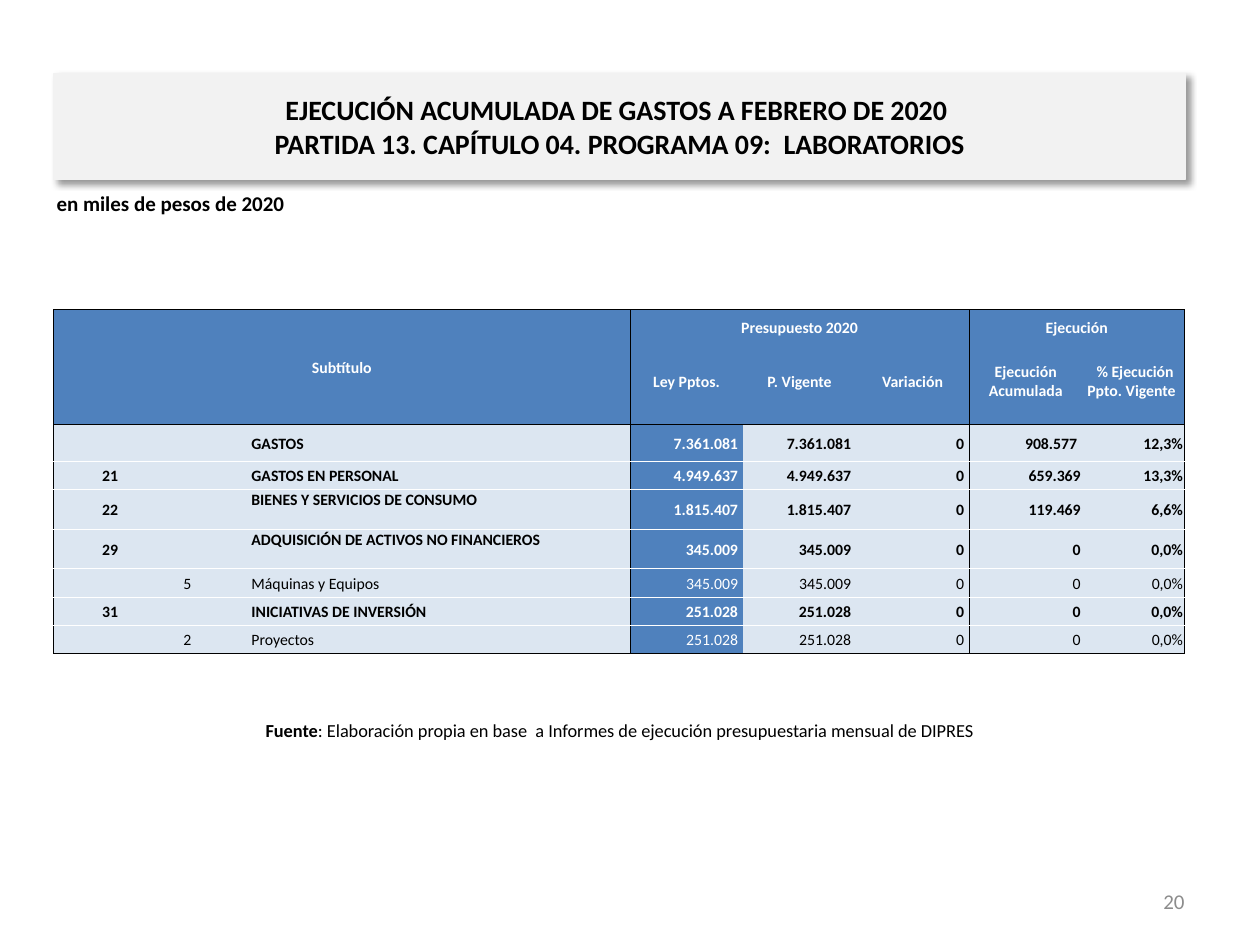
from lxml import etree
from pptx import Presentation
from pptx import util as u
from pptx.dml.color import RGBColor
from pptx.enum import shapes, text
from pptx.oxml import ns

BLACK = RGBColor(0x00, 0x00, 0x00)
WHITE = RGBColor(0xFF, 0xFF, 0xFF)
BLUE = RGBColor(0x4F, 0x81, 0xBD)
PALE_BLUE = RGBColor(0xDC, 0xE6, 0xF1)
PALE_GRAY = RGBColor(0xF2, 0xF2, 0xF2)
PAGE_GRAY = RGBColor(0x8C, 0x8C, 0x8C)
LEFT, CENTER, RIGHT = text.PP_ALIGN.LEFT, text.PP_ALIGN.CENTER, text.PP_ALIGN.RIGHT
TOP, MIDDLE, BOTTOM = text.MSO_ANCHOR.TOP, text.MSO_ANCHOR.MIDDLE, text.MSO_ANCHOR.BOTTOM


def write(frame, runs, align, size, color):
    """Fill a text frame with (text, bold) runs; a newline run is a line break."""
    paragraph = frame.paragraphs[0]
    paragraph.alignment = align
    for words, bold in runs:
        if words == "\n":
            paragraph.add_line_break()
            continue
        run = paragraph.add_run()
        run.text = words
        font_format = {"name": "Calibri", "size": u.Pt(size), "bold": bold}
        for key, value in font_format.items():
            setattr(run.font, key, value)
        run.font.color.rgb = color


def draw_border(cell, side, color):
    """Draw one side of a cell, or clear it when the colour is None."""
    line = etree.SubElement(cell._tc.get_or_add_tcPr(), ns.qn("a:ln" + side), w="6350")
    if color is None:
        etree.SubElement(line, ns.qn("a:noFill"))
    else:
        solid = etree.SubElement(line, ns.qn("a:solidFill"))
        etree.SubElement(solid, ns.qn("a:srgbClr"), val=str(color))


prs = Presentation()
prs.slide_width, prs.slide_height = u.Cm(25.4), u.Cm(19.05)
slide = prs.slides.add_slide(prs.slide_layouts[6])

# Title band
band = slide.shapes.add_shape(shapes.MSO_SHAPE.RECTANGLE,
                              u.Cm(1.09), u.Cm(1.48), u.Cm(22.81), u.Cm(2.13))
band.shadow.inherit = False
band.fill.solid()
band.fill.fore_color.rgb = PALE_GRAY
band.line.color.rgb = PALE_GRAY
band.line.width = u.Pt(0.75)
shadow = etree.SubElement(band._element.spPr.find(ns.qn("a:effectLst")), ns.qn("a:outerShdw"),
                          blurRad="50800", dist="38100", dir="2700000",
                          algn="tl", rotWithShape="0")
shadow_color = etree.SubElement(shadow, ns.qn("a:srgbClr"), val=str(BLACK))
etree.SubElement(shadow_color, ns.qn("a:alpha"), val="40000")
band.text_frame.word_wrap = True
band.text_frame.vertical_anchor = MIDDLE
title = [("EJECUCIÓN ACUMULADA DE GASTOS A FEBRERO DE 2020 ", True),
         ("\n", True),
         ("PARTIDA 13. CAPÍTULO 04. PROGRAMA 09:  LABORATORIOS", True)]
write(band.text_frame, title, CENTER, 16, BLACK)

# Unit line, source and page number
source = [("Fuente", True),
          (": Elaboración propia en base  a Informes de ejecución "
           "presupuestaria mensual de DIPRES", False)]
captions = [
    ((0.89, 3.72, 21.44, 0.79), [("en miles de pesos de 2020", True)], LEFT, TOP, 12, BLACK),
    ((1.09, 14.33, 22.81, 0.79), source, CENTER, MIDDLE, 10.5, BLACK),
    ((18.21, 17.65, 5.92, 1.02), [("20", False)], RIGHT, MIDDLE, 12, PAGE_GRAY),
]
for place, runs, align, anchor, size, color in captions:
    caption = slide.shapes.add_textbox(*map(u.Cm, place)).text_frame
    caption.word_wrap = True
    caption.vertical_anchor = anchor
    write(caption, runs, align, size, color)

# Budget table
headers = [
    ["Subtítulo", "", "", "", "Presupuesto 2020", "", "", "Ejecución", ""],
    ["", "", "", "", "Ley Pptos.", "P. Vigente", "Variación",
     "Ejecución Acumulada", " % Ejecución Ppto. Vigente "],
]
# Subtitle code, item code, label, budget, executed amount, executed share
spending = [
    ("", "", "GASTOS", "7.361.081 ", "908.577 ", "12,3%"),
    ("21", "", "GASTOS EN PERSONAL", "4.949.637 ", "659.369", "13,3%"),
    ("22", "", "BIENES Y SERVICIOS DE CONSUMO", "1.815.407 ", "119.469", "6,6%"),
    ("29", "", "ADQUISICIÓN DE ACTIVOS NO FINANCIEROS", "345.009 ", "0", "0,0%"),
    ("", "5", "Máquinas y Equipos", "345.009 ", "0", "0,0%"),
    ("31", "", "INICIATIVAS DE INVERSIÓN", "251.028 ", "0", "0,0%"),
    ("", "2", "Proyectos", "251.028 ", "0", "0,0%"),
]
grid = headers + [[code, item, "", label, budget, budget, "0 ", executed, share]
                  for code, item, label, budget, executed, share in spending]
widths = [2.28, 0.84, 0.84, 7.66, 2.28, 2.28, 2.28, 2.28, 2.06]
heights = [0.57, 1.75, 0.74, 0.57, 0.8, 0.8, 0.57, 0.57, 0.57]
tall_rows = (4, 5)
LABEL, LAW = 3, 4
black_columns = (0, 4, 7, len(widths))
black_rows = (0, len(headers), len(grid))

budget_table = slide.shapes.add_table(len(grid), len(widths), u.Cm(1.08), u.Cm(6.24),
                                      u.Cm(sum(widths)), u.Cm(sum(heights))).table
budget_table.first_row = budget_table.horz_banding = False
for column, width in zip(budget_table.columns, widths):
    column.width = u.Cm(width)
for row, height in zip(budget_table.rows, heights):
    row.height = u.Cm(height)
for first, last in [((0, 0), (1, 3)), ((0, 4), (0, 6)), ((0, 7), (0, 8))]:
    budget_table.cell(*first).merge(budget_table.cell(*last))

cell_format = {"margin_left": u.Cm(0.03), "margin_right": u.Cm(0.03),
               "margin_top": u.Cm(0.03), "margin_bottom": 0}
for r, row_words in enumerate(grid):
    in_header = r < len(headers)
    bold = in_header or not row_words[1]
    for c, words in enumerate(row_words):
        cell = budget_table.cell(r, c)
        for key, value in cell_format.items():
            setattr(cell, key, value)
        if r == 0 and c >= LAW:
            cell.vertical_anchor = BOTTOM
        elif r in tall_rows and c == LABEL:
            cell.vertical_anchor = TOP
        else:
            cell.vertical_anchor = MIDDLE

        across, down = (cell.span_width, cell.span_height) if cell.is_merge_origin else (1, 1)
        for side, edge in (("L", c), ("R", c + across)):
            draw_border(cell, side, BLACK if edge in black_columns else None)
        for side, edge in (("T", r), ("B", r + down)):
            inner = WHITE if edge > len(headers) else None
            draw_border(cell, side, BLACK if edge in black_rows else inner)

        on_blue = in_header or c == LAW
        cell.fill.solid()
        cell.fill.fore_color.rgb = BLUE if on_blue else PALE_BLUE
        if words:
            align = CENTER if in_header or c < LABEL else LEFT if c == LABEL else RIGHT
            write(cell.text_frame, [(words, bold)], align, 9, WHITE if on_blue else BLACK)
        else:
            etree.SubElement(cell.text_frame.paragraphs[0]._p, ns.qn("a:endParaRPr"), sz="900")

prs.save("out.pptx")
